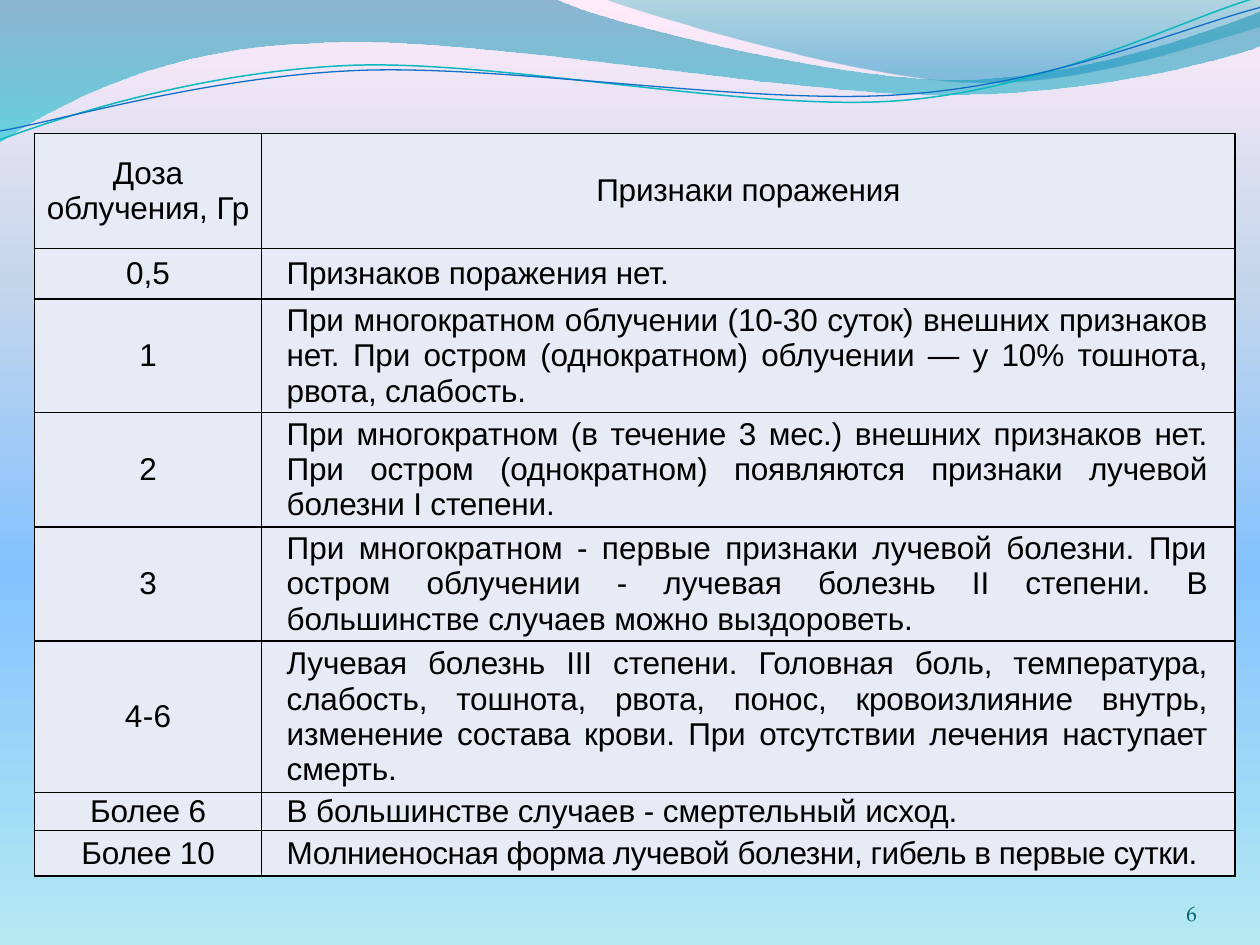
"""Build the slide with the table of radiation doses and signs of injury."""
from lxml.etree import SubElement
from pptx import Presentation
from pptx.dml.color import RGBColor
from pptx.enum.text import MSO_ANCHOR, PP_ALIGN
from pptx.oxml import parse_xml
from pptx.oxml.ns import nsdecls, qn
from pptx.util import Cm, Pt


def color(value):
    return RGBColor.from_string(value)


def set_gradient(fill, properties, stops, angle):
    fill.gradient()
    fill.gradient_angle = angle
    stop_list = properties.find(qn("a:gradFill")).find(qn("a:gsLst"))
    for old_stop in list(stop_list):
        stop_list.remove(old_stop)
    for position, value, opacity in stops:
        stop = SubElement(stop_list, qn("a:gs"), pos=str(position * 1000))
        stop_color = SubElement(stop, qn("a:srgbClr"), val=value)
        if opacity < 100:
            SubElement(stop_color, qn("a:alpha"), val=str(opacity * 1000))


presentation = Presentation()
presentation.slide_width = Cm(25.4)
presentation.slide_height = Cm(19.05)
slide = presentation.slides.add_slide(presentation.slide_layouts[6])

background_fill = slide.background.fill
set_gradient(
    background_fill, slide.element.find(".//" + qn("p:bgPr")),
    [(0, "B3EAF2", 100), (40, "85C2FF", 100), (70, "C4D6EB", 100), (100, "FFEBFA", 100)], 90,
)

waves = [
    ([(0, 0), (4.4, -0.01), (4.76, 0.17, 6.64, 0.63, 7.58, 0.63),
      (8.53, 0.63, 9.58, 0.26, 10, 0.09), (10.01, 0.36),
      (9.83, 0.44, 8.7, 0.76, 7.46, 0.75), (6.22, 0.75, 3.82, 0.28, 2.57, 0.34),
      (1.29, 0.36, 0.46, 0.83, -0.01, 1.13), (0, 0)],
     [(0, "0074A1", 45), (100, "00C6CF", 55)], None),
    ([(4.79, -0.01), (5.09, 0.11, 6.82, 0.62, 7.69, 0.65),
      (8.56, 0.69, 9.61, 0.32, 10, 0.21), (10, 0), (4.79, -0.01)],
     [(0, "00A1A9", 30), (80, "008BBF", 45)], None),
    ([(0, 1.11), (0.48, 0.93, 1.58, 0.57, 2.77, 0.52), (3.95, 0.47, 5.93, 0.89, 7.13, 0.8),
      (8.33, 0.71, 9.38, 0.15, 9.98, -0.02)], None, ("0AB8BF", 0.85)),
    ([(0, 1.04), (0.47, 0.96, 1.64, 0.61, 2.83, 0.56), (4.03, 0.51, 5.97, 0.84, 7.17, 0.75),
      (8.36, 0.67, 9.41, 0.21, 10, 0.06)], None, ("0F6FC6", 0.75)),
]
for segments, stops, line in waves:
    points = [(segment[index] * 1000, segment[index + 1] * 1000)
              for segment in segments for index in range(0, len(segment), 2)]
    builder = slide.shapes.build_freeform(*points[0], scale=Cm(2.54) / 1000)
    builder.add_line_segments(points[1:], close=line is None)
    shape = builder.convert_to_shape()
    shape.shadow.inherit = False
    line_elements = iter(list(shape.element.iter(qn("a:lnTo"))))
    for segment in segments[1:]:
        first = next(line_elements)
        if len(segment) == 6:
            first.tag = qn("a:cubicBezTo")
            first.append(next(line_elements)[0])
            first.append(next(line_elements)[0])
    for element in list(shape.element.iter(qn("a:lnTo"))):
        if len(element) == 0:
            element.getparent().remove(element)
    if line:
        shape.fill.background()
        shape.line.color.rgb = color(line[0])
        shape.line.width = Pt(line[1])
    else:
        set_gradient(shape.fill, shape.element.spPr, stops, 270)
        shape.line.fill.background()

rows = [
    (2.32, [[("Доза", -10)], [("облучения, ", -10), ("Гр", 0)]], [[("Признаки поражения", -10)]]),
    (1.02, [[("0,5", 0)]], [[("Признаков поражения нет.", -10)]]),
    (2.29, [[("1", 0)]], [[("При многократном облучении (10-30 суток) внешних признаков нет. "
                            "При остром (однократном) облучении — у 10% тошнота, рвота, "
                            "слабость.", -10)]]),
    (2.3, [[("2", 0)]], [[("При многократном (в течение 3 мес.) внешних признаков нет. "
                           "При остром (однократном) появляются признаки лучевой болезни "
                           "I степени.", -10)]]),
    (2.3, [[("3", 0)]], [[("При многократном - первые признаки лучевой болезни. При ", 0),
                          ("остром облучении - лучевая болезнь II степени. "
                           "В большинстве случаев можно выздороветь.", -5)]]),
    (3.06, [[("4-6", 20)]], [[("Лучевая болезнь III степени. Головная боль, температура, "
                               "слабость, тошнота, рвота, понос, кровоизлияние внутрь, "
                               "изменение состава крови. При отсутствии лечения наступает "
                               "смерть.", -10)]]),
    (0.76, [[("Более 6", -10)]], [[("В большинстве случаев - смертельный исход.", -5)]]),
    (0.92, [[("Более 10", -10)]],
     [[("Молниеносная форма лучевой болезни, гибель в первые сутки.", -25)]]),
]
table = slide.shapes.add_table(len(rows), 2, Cm(0.7), Cm(2.69), Cm(24.2), Cm(14.97)).table
table.first_row = False
table.horz_banding = False
table.columns[0].width = Cm(4.57)
table.columns[1].width = Cm(19.63)
for row_index, (height, *contents) in enumerate(rows):
    table.rows[row_index].height = Cm(height)
    for column_index, paragraphs in enumerate(contents):
        is_description = row_index > 0 and column_index == 1
        cell = table.cell(row_index, column_index)
        cell.fill.solid()
        cell.fill.fore_color.rgb = color("E7EBF5")
        cell.vertical_anchor = MSO_ANCHOR.MIDDLE
        cell.margin_left = Cm(0.08)
        cell.margin_right = Cm(0.56 if is_description else 0.08)
        cell.margin_top = cell.margin_bottom = Cm(0)
        cell_properties = cell._tc.get_or_add_tcPr()
        for index, side in enumerate(("lnL", "lnR", "lnT", "lnB")):
            cell_properties.insert(index, parse_xml(
                f'<a:{side} {nsdecls("a")} w="12700"><a:solidFill>'
                f'<a:srgbClr val="000000"/></a:solidFill></a:{side}>'
            ))
        for index, runs in enumerate(paragraphs):
            text_frame = cell.text_frame
            paragraph = text_frame.add_paragraph() if index else text_frame.paragraphs[0]
            paragraph.alignment = PP_ALIGN.JUSTIFY if is_description else PP_ALIGN.CENTER
            if is_description:
                paragraph_properties = paragraph._p.get_or_add_pPr()
                paragraph_properties.set("marL", str(Cm(0.43)))
                paragraph_properties.set("indent", "0")
            for text, spacing in runs:
                run = paragraph.add_run()
                run.text = text
                run.font.size = Pt(18)
                run.font.name = "Arial"
                run.font.color.rgb = color("000000")
                run._r.get_or_add_rPr().set("spc", str(spacing))

number_box = slide.shapes.add_textbox(Cm(22.02), Cm(17.65), Cm(2.11), Cm(1.02))
text_frame = number_box.text_frame
text_frame.word_wrap = True
text_frame.vertical_anchor = MSO_ANCHOR.BOTTOM
text_frame.margin_left = text_frame.margin_right = Cm(0)
text_frame.margin_top = text_frame.margin_bottom = Cm(0)
paragraph = text_frame.paragraphs[0]
paragraph.alignment = PP_ALIGN.RIGHT
run = paragraph.add_run()
run.text = "6"
run.font.size = Pt(12)
run.font.name = "TeX Gyre Pagella"
run.font.color.rgb = color("045D75")

presentation.save("out.pptx")
